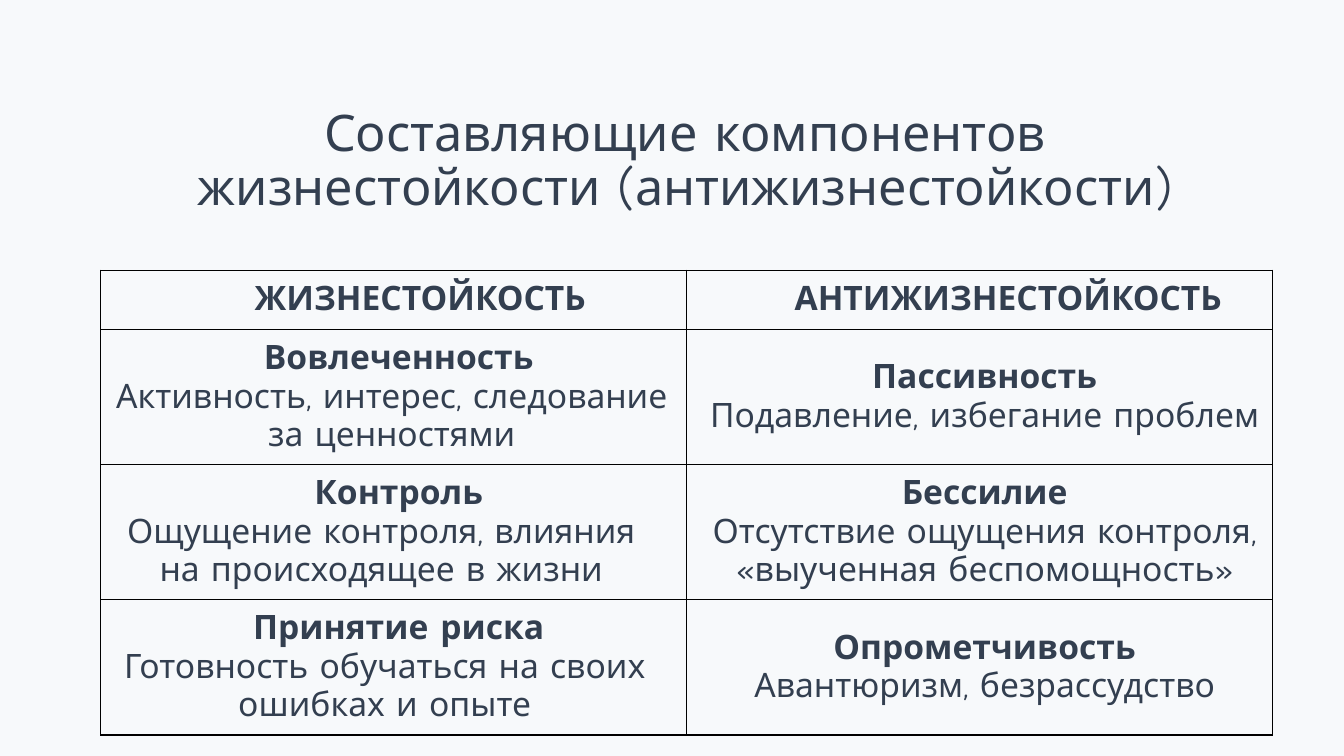
from lxml.etree import SubElement
from pptx import Presentation
from pptx.dml.color import RGBColor
from pptx.enum.text import MSO_ANCHOR, PP_ALIGN
from pptx.oxml import parse_xml
from pptx.oxml.ns import nsdecls
from pptx.util import Pt

HUES = {"page": "F7F9FB", "ink": "333F50", "line": "000000"}
FACE = "Comic Neue"

HEADS = [("ЖИЗНЕСТОЙКОСТЬ", 38), ("АНТИЖИЗНЕСТОЙКОСТЬ", 41)]
PAIRS = [
    [("Вовлеченность", ["Активность, интерес, следование за ценностями"], 10),
     ("Пассивность", ["Подавление, избегание проблем"], 0)],
    [("Контроль", ["Ощущение контроля, влияния на происходящее в жизни"], 25),
     ("Бессилие", ["Отсутствие ощущения контроля,", "«выученная беспомощность»"], 0)],
    [("Принятие риска", ["Готовность обучаться на своих ошибках и опыте"], 20),
     ("Опрометчивость", ["Авантюризм, безрассудство"], 0)],
]


def write(para, text, size=24, bold=False, left=0, right=0, pitch=None):
    props = para._p.get_or_add_pPr()
    props.set("marL", str(Pt(left)))
    props.set("marR", str(Pt(right)))
    props.set("indent", "0")
    para.alignment = PP_ALIGN.CENTER
    para.space_before = Pt(0)
    if pitch:
        para.line_spacing = pitch
    run = para.add_run()
    run.text = text
    run.font.name = FACE
    run.font.size = Pt(size)
    run.font.bold = bold
    run.font.color.rgb = RGBColor.from_string(HUES["ink"])


def frame(cell):
    cell.margin_left = cell.margin_right = cell.margin_top = cell.margin_bottom = 0
    cell.vertical_anchor = MSO_ANCHOR.MIDDLE
    props = cell._tc.get_or_add_tcPr()
    for side in ("lnL", "lnR", "lnT", "lnB"):
        props.append(parse_xml(
            f'<a:{side} {nsdecls("a")} w="{Pt(1)}"><a:solidFill>'
            f'<a:srgbClr val="{HUES["line"]}"/></a:solidFill></a:{side}>'))
    cell.fill.background()


def add_title(slide, left, top, width, height):
    title = slide.shapes.title
    title.left, title.top, title.width, title.height = map(Pt, (left, top, width, height))
    text = title.text_frame
    text.word_wrap = True
    text.vertical_anchor = MSO_ANCHOR.MIDDLE
    write(text.paragraphs[0], "Составляющие компонентов жизнестойкости (антижизнестойкости)",
          size=36, pitch=0.9)


def add_grid(slide, left, top, width, height, head=42.5):
    count = len(PAIRS)
    grid = slide.shapes.add_table(count + 1, 2, *map(Pt, (left, top, width, height))).table
    grid.first_row = grid.horz_banding = False
    for col in grid.columns:
        col.width = Pt(width / 2)
    for index, row in enumerate(grid.rows):
        row.height = Pt((height - head) / count if index else head)
    for cell in grid.iter_cells():
        frame(cell)
    for col, (name, shift) in enumerate(HEADS):
        write(grid.cell(0, col).text_frame.paragraphs[0], name, bold=True, left=shift)
    for row, pair in enumerate(PAIRS, 1):
        for col, (name, lines, right) in enumerate(pair):
            text = grid.cell(row, col).text_frame
            write(text.paragraphs[0], name, bold=True, left=7.2)
            for line in lines:
                write(text.add_paragraph(), line, left=7.2, right=right)


def main():
    deck = Presentation()
    deck.slide_width, deck.slide_height = Pt(960), Pt(540)
    slide = deck.slides.add_slide(deck.slide_layouts[5])
    fill = slide.background.fill
    fill.solid()
    fill.fore_color.rgb = RGBColor.from_string(HUES["page"])
    add_title(slide, 75.5, 63.5, 828, 104.5)
    add_grid(slide, 72, 193, 837, 332)
    deck.save("out.pptx")


if __name__ == "__main__":
    main()
